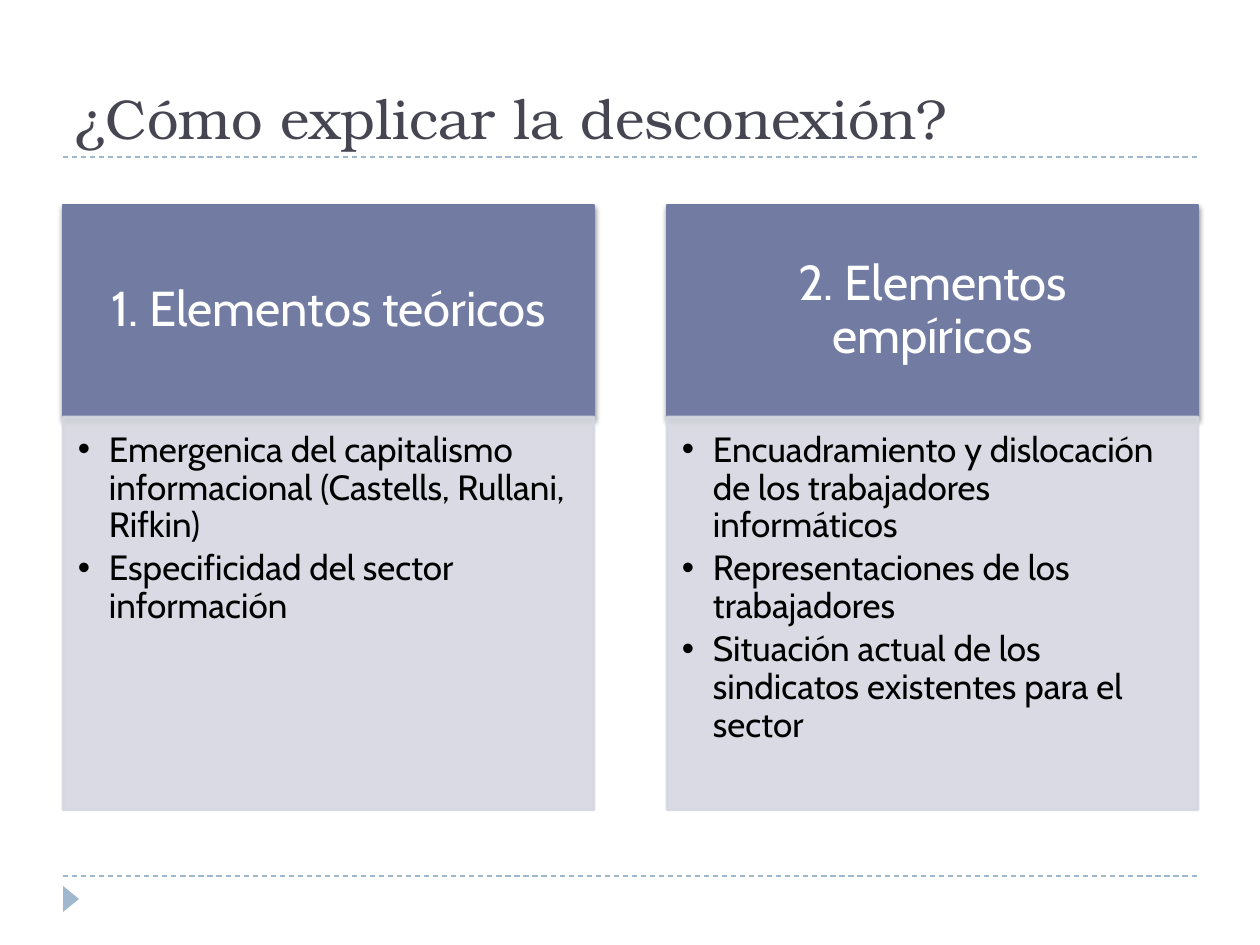
import pptx
import pptx.util
import pptx.dml.color
import pptx.enum.dml
import pptx.enum.shapes
import pptx.enum.text
import pptx.oxml
import pptx.oxml.ns
import lxml.etree

EMU_PER_PX = 914400 / 126
SHAPE = pptx.enum.shapes.MSO_SHAPE
ALIGN = pptx.enum.text.PP_ALIGN
ANCHOR = pptx.enum.text.MSO_ANCHOR


def px(n):
    return pptx.util.Emu(round(n * EMU_PER_PX))


def rgb(value):
    return pptx.dml.color.RGBColor.from_string(value)


def add_xml(parent, tag, **attrs):
    child = lxml.etree.SubElement(parent, pptx.oxml.ns.qn(tag))
    for name, value in attrs.items():
        child.set(name, str(value))
    return child


class SlideBuilder:
    TITLE_FONT, BODY_FONT = "TeX Gyre Bonum", "Cabin"
    INK, ACCENT, PANEL, RULE = "464653", "727CA3", "D5D7E0", "9FB8CD"

    def __init__(self, slide):
        self.slide = slide

    def place(self, sp, x, y, w, h):
        sp.left, sp.top, sp.width, sp.height = px(x), px(y), px(w), px(h)

    def frame(self, sp, anchor, margins=None):
        tf = sp.text_frame
        tf.word_wrap = True
        tf.auto_size = pptx.enum.text.MSO_AUTO_SIZE.NONE
        tf.vertical_anchor = anchor
        if margins:
            (tf.margin_left, tf.margin_top,
             tf.margin_right, tf.margin_bottom) = map(px, margins)
        return tf

    def style(self, p, font, size, color, align, after=0):
        p.font.name, p.font.size = font, pptx.util.Pt(size)
        p.font.color.rgb = rgb(color)
        p.alignment = align
        p.space_before, p.space_after = pptx.util.Pt(0), pptx.util.Pt(after)

    def paint(self, sp, color):
        sp.fill.solid()
        sp.fill.fore_color.rgb = rgb(color)
        sp.line.color.rgb = rgb(color)
        sp.line.width = pptx.util.Pt(1.5)

    def rule(self, x1, x2, y):
        line = self.slide.shapes.add_connector(
            pptx.enum.shapes.MSO_CONNECTOR.STRAIGHT, px(x1), px(y), px(x2), px(y))
        line.line.color.rgb = rgb(self.RULE)
        line.line.width = pptx.util.Pt(0.75)
        line.line.dash_style = pptx.enum.dml.MSO_LINE.DASH
        add_xml(line.element.spPr, "a:effectLst")

    def marker(self, x, y, w, h):
        sp = self.slide.shapes.add_shape(
            SHAPE.ISOSCELES_TRIANGLE, px(x), px(y), px(w), px(h))
        sp.rotation = 90
        sp.shadow.inherit = False
        sp.fill.solid()
        sp.fill.fore_color.rgb = rgb(self.RULE)
        sp.line.fill.background()

    def title(self, text, x, y, w, h):
        sp = self.slide.shapes.title
        self.place(sp, x, y, w, h)
        tf = self.frame(sp, ANCHOR.BOTTOM)
        tf.text = text
        self.style(tf.paragraphs[0], self.TITLE_FONT, 32, self.INK, ALIGN.LEFT)

    def header(self, text, x, y, w, h):
        sp = self.slide.shapes.add_shape(
            SHAPE.RECTANGLE, px(x), px(y), px(w), px(h))
        self.paint(sp, self.ACCENT)
        # Soft shadow below the header
        sp.shadow.inherit = False
        effects = sp.element.spPr.find(pptx.oxml.ns.qn("a:effectLst"))
        shadow = add_xml(effects, "a:outerShdw", blurRad=38100, dist=25400,
                         dir=5400000, rotWithShape=0)
        add_xml(add_xml(shadow, "a:srgbClr", val="000000"), "a:alpha", val=40000)
        tf = self.frame(sp, ANCHOR.MIDDLE, (28, 15, 28, 15))
        tf.text = text
        p = tf.paragraphs[0]
        self.style(p, self.BODY_FONT, 28, "FFFFFF", ALIGN.CENTER)
        p.line_spacing = 0.9
        return sp

    def bullets(self, idx, items, below, x, y, w, h):
        sp = self.slide.placeholders[idx]
        self.place(sp, x, y, w, h)
        self.paint(sp, self.PANEL)
        for color in sp.element.spPr.iter(pptx.oxml.ns.qn("a:srgbClr")):
            add_xml(color, "a:alpha", val=90000)
        tf = self.frame(sp, ANCHOR.TOP, (15, 15, 20, 21))
        tf.text = "\n".join(items)
        for p in tf.paragraphs:
            self.style(p, self.BODY_FONT, 20, "000000", ALIGN.LEFT, after=3)
            p.line_spacing = 0.9
            pPr = p._p.get_or_add_pPr()
            pPr.set("marL", str(px(31)))
            pPr.set("indent", str(-px(31)))
            bullet = pptx.oxml.parse_xml(
                '<a:buChar %s char="•"/>' % pptx.oxml.ns.nsdecls("a"))
            pPr.find(pptx.oxml.ns.qn("a:spcAft")).addnext(bullet)
        # The panel lies over the header's shadow
        below.element.addnext(sp.element)


COLUMNS = [
    ("1. Elementos teóricos", [
        "Emergenica del capitalismo informacional (Castells, Rullani, Rifkin)",
        "Especificidad del sector información"]),
    ("2. Elementos empíricos", [
        "Encuadramiento y dislocación de los trabajadores informáticos",
        "Representaciones de los trabajadores",
        "Situación actual de los sindicatos existentes para el sector"]),
]
LEFT, RIGHT = 63, 1197
COLUMN_W, COLUMN_STEP = 531, 604
HEADER_Y, HEADER_H, PANEL_H = 205, 212, 393


def main():
    prs = pptx.Presentation()
    prs.slide_width, prs.slide_height = px(1260), px(945)
    builder = SlideBuilder(prs.slides.add_slide(prs.slide_layouts[3]))

    # Rules, corner marker and title
    for y in (876, 157):
        builder.rule(LEFT, RIGHT, y)
    builder.marker(58, 891, 26, 16)
    builder.title("¿Cómo explicar la desconexión?", LEFT, 21, RIGHT - LEFT, 136)

    # Two columns, each a header over a bulleted panel
    for i, (heading, items) in enumerate(COLUMNS):
        x = LEFT + i * COLUMN_STEP
        header = builder.header(heading, x, HEADER_Y, COLUMN_W, HEADER_H)
        builder.bullets(i + 1, items, header,
                        x, HEADER_Y + HEADER_H, COLUMN_W, PANEL_H)

    prs.save("out.pptx")


if __name__ == "__main__":
    main()
